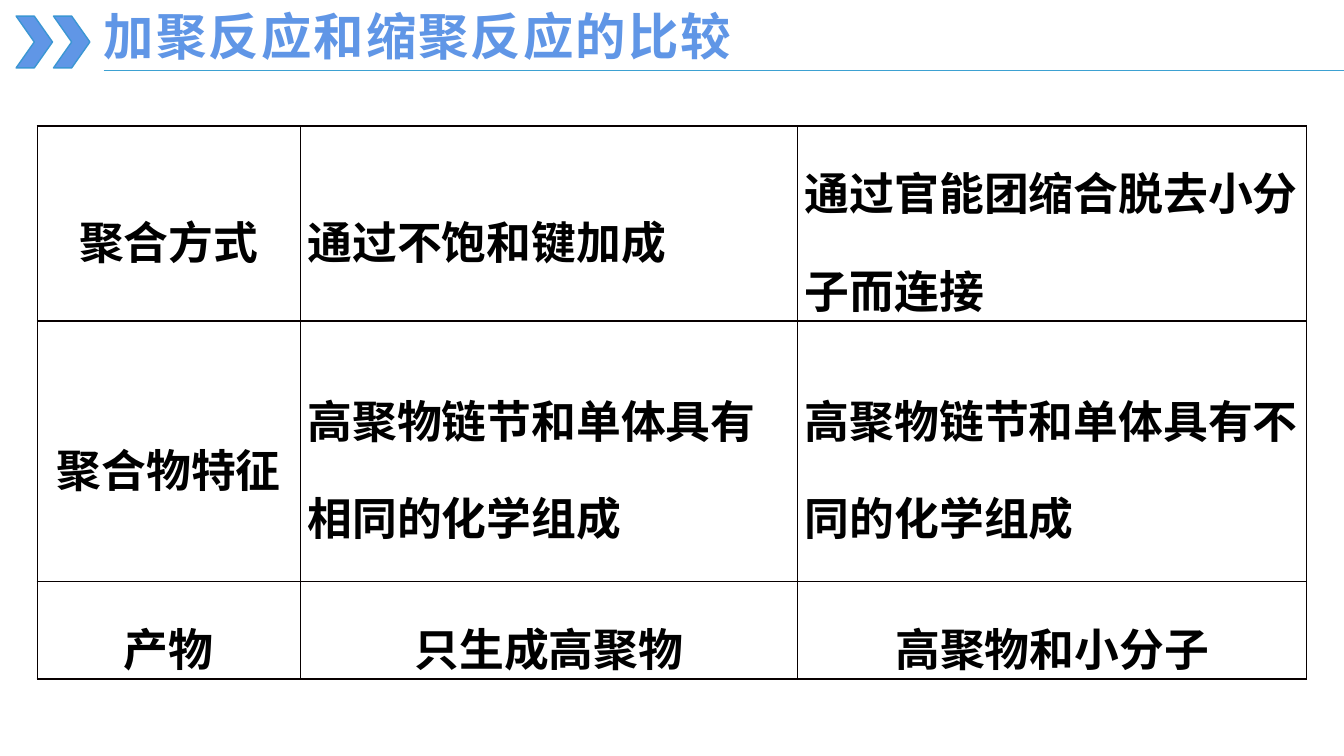
import lxml.etree
import pptx
import pptx.dml.color
import pptx.enum.shapes
import pptx.enum.text
import pptx.oxml.ns
import pptx.util

Pt = pptx.util.Pt
qn = pptx.oxml.ns.qn
ALIGN = pptx.enum.text.PP_ALIGN
ANCHOR = pptx.enum.text.MSO_ANCHOR


def color(hex_string):
    return pptx.dml.color.RGBColor.from_string(hex_string)


def write(frame, text, size, fill, font, align=ALIGN.LEFT, line_spacing=None, tracking=0):
    """Put one bold paragraph in a text frame; tracking is in points."""
    paragraph = frame.paragraphs[0]
    paragraph.alignment = align
    paragraph.line_spacing = line_spacing
    run = paragraph.add_run()
    run.text = text
    run.font.size = Pt(size)
    run.font.bold = True
    run.font.color.rgb = color(fill)
    run.font.name = font
    properties = run.font._element
    lxml.etree.SubElement(properties, qn("a:ea"), typeface=font)
    if tracking:
        properties.set("spc", str(round(tracking * 100)))


class ComparisonSlide:
    font = "Noto Sans CJK SC"
    accent = "6096E6"
    outline = "3B96D3"
    rule_color = "3DA1D2"
    text_color = "000000"
    border_color = "080000"

    def __init__(self, presentation):
        self.slide = presentation.slides.add_slide(presentation.slide_layouts[6])
        self.shapes = self.slide.shapes

    def chevron(self, left, top, width, height):
        shape = self.shapes.add_shape(
            pptx.enum.shapes.MSO_SHAPE.CHEVRON, Pt(left), Pt(top), Pt(width), Pt(height))
        shape.shadow.inherit = False
        shape.fill.solid()
        shape.fill.fore_color.rgb = color(self.accent)
        shape.line.color.rgb = color(self.outline)
        shape.line.width = Pt(1)

    def rule(self, left, right, top):
        line = self.shapes.add_connector(
            pptx.enum.shapes.MSO_CONNECTOR.STRAIGHT, Pt(left), Pt(top), Pt(right), Pt(top))
        line.line.color.rgb = color(self.rule_color)
        line.line.width = Pt(0.5)
        lxml.etree.SubElement(line._element.spPr, qn("a:effectLst"))

    def title(self, text, left, top, width, height):
        box = self.shapes.add_textbox(Pt(left), Pt(top), Pt(width), Pt(height))
        box.text_frame.word_wrap = True
        write(box.text_frame, text, 36, self.accent, self.font, tracking=1.5)

    def border(self, cell):
        properties = cell._tc.get_or_add_tcPr()
        for side in ("a:lnL", "a:lnR", "a:lnT", "a:lnB"):
            line = lxml.etree.SubElement(properties, qn(side), w=str(Pt(1)))
            fill = lxml.etree.SubElement(line, qn("a:solidFill"))
            lxml.etree.SubElement(fill, qn("a:srgbClr"), val=self.border_color)

    def table(self, rows, left, top, widths, heights):
        """Centre the first column and the last row; align the rest left."""
        table = self.shapes.add_table(
            len(rows), len(widths), Pt(left), Pt(top), Pt(sum(widths)), Pt(sum(heights))).table
        table.first_row = table.horz_banding = False
        for column, width in zip(table.columns, widths):
            column.width = Pt(width)
        for row_index, (texts, height) in enumerate(zip(rows, heights)):
            table.rows[row_index].height = Pt(height)
            for column_index, text in enumerate(texts):
                cell = table.cell(row_index, column_index)
                self.border(cell)
                cell.fill.background()
                cell.margin_left = cell.margin_right = Pt(5)
                cell.margin_top = cell.margin_bottom = Pt(0)
                cell.vertical_anchor = ANCHOR.MIDDLE
                centred = column_index == 0 or row_index == len(rows) - 1
                write(cell.text_frame, text, 32, self.text_color, self.font,
                      align=ALIGN.CENTER if centred else ALIGN.LEFT, line_spacing=1.5)


def main():
    presentation = pptx.Presentation()
    presentation.slide_width = Pt(960)
    presentation.slide_height = Pt(540)
    page = ComparisonSlide(presentation)
    for index in range(2):
        page.chevron(11.5 + index * 26.7, 11.5, 26, 37)
    page.rule(74, 960, 50.4)
    page.table(
        [("聚合方式", "通过不饱和键加成", "通过官能团缩合脱去小分子而连接"),
         ("聚合物特征", "高聚物链节和单体具有相同的化学组成", "高聚物链节和单体具有不同的化学组成"),
         ("产物", "只生成高聚物", "高聚物和小分子")],
        left=26.6, top=90, widths=(188, 355.3, 363.6), heights=(124, 186, 62))
    page.title("加聚反应和缩聚反应的比较", 67, 0, 549.5, 51)
    presentation.save("out.pptx")


if __name__ == "__main__":
    main()
